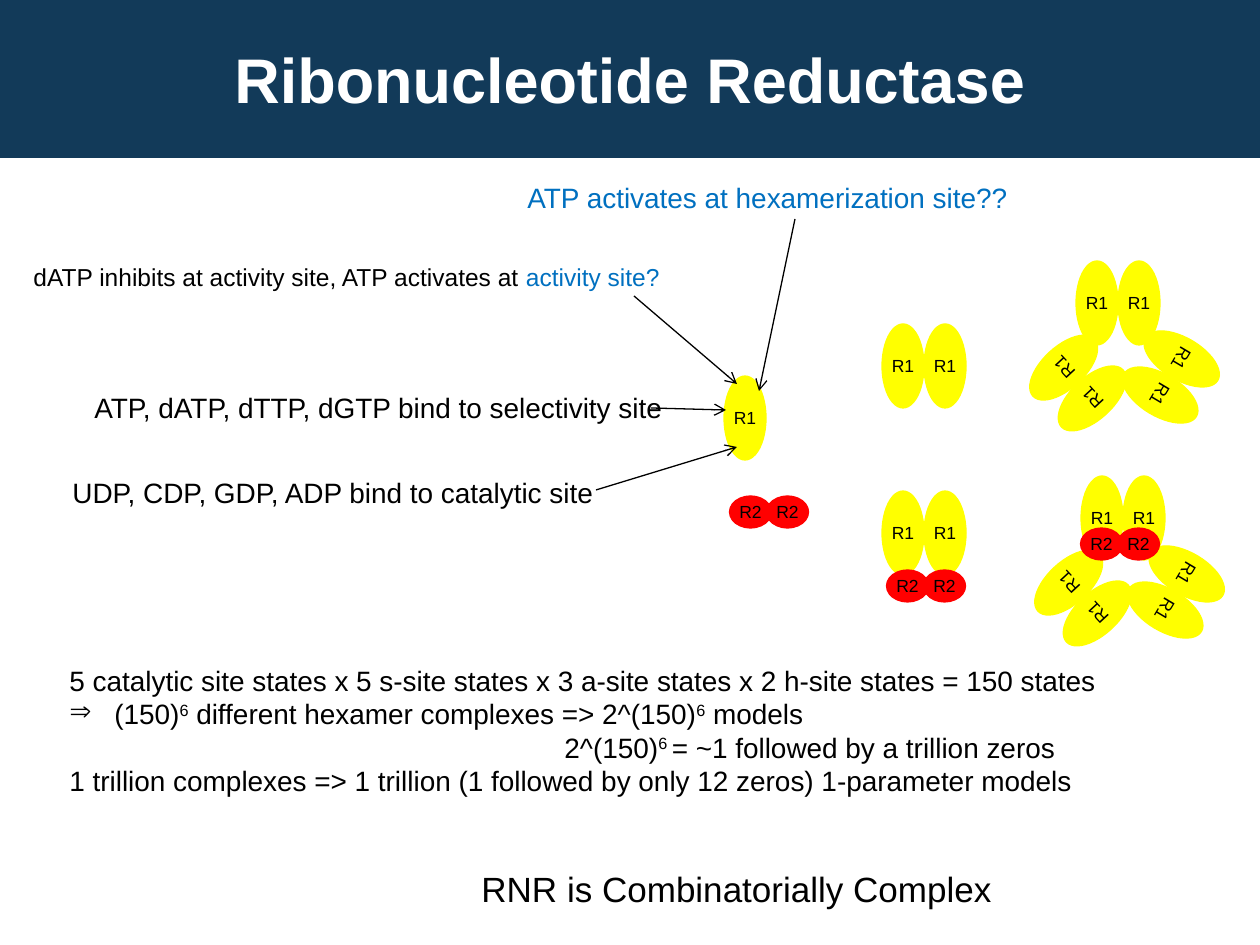
from math import cos, radians, sin

from lxml.etree import SubElement
from pptx import Presentation
from pptx.dml.color import RGBColor
from pptx.enum.shapes import MSO_CONNECTOR, MSO_SHAPE
from pptx.enum.text import MSO_ANCHOR, PP_ALIGN
from pptx.oxml.ns import qn
from pptx.util import Pt

PX = 914400 / 126
COLORS = {"navy": "123A59", "white": "FFFFFF", "black": "000000",
          "blue": "0070C0", "R1": "FFFF00", "R2": "FF0000"}

# Subunit: width, height, distance between the two centres of a dimer
SUBUNITS = {"R1": (42, 84, 42), "R2": (42, 32, 37)}

# Dimers: subunit, centre x, centre y
DIMERS = [("R2", 769, 512), ("R1", 924, 366), ("R1", 924, 533), ("R2", 926, 586)]
# Hexamer: offset of each R1 dimer from the hexamer centre, rotation
HEXAMER = [(0, 0, 0), (53, 74, 120.7), (-40, 80, 227.2)]
HEXAMER_CENTERS = [(1118, 303), (1123, 518)]
HEXAMER_R2 = ("R2", 1120, 544)

# Runs are (text, format); labels are (left, top, width, height, size, runs)
LABELS = [
    (60, 469, 598, 46, 16, [("UDP, CDP, GDP, ADP bind to catalytic site", {})]),
    (82, 384, 745, 46, 16, [("ATP, dATP, dTTP, dGTP bind to selectivity site", {})]),
    (21, 256, 664, 42, 14, [("dATP inhibits at activity site, ATP activates at ", {}),
                            ("activity site?", {"color": "blue"})]),
    (515, 174, 561, 46, 16, [("ATP activates at hexamerization site??", {"color": "blue"})]),
    (469, 861, 612, 56, 20, [("RNR is Combinatorially Complex", {})]),
]
ARROWS = [(596, 490, 737, 447), (651, 408, 726, 410),
          (634, 296, 737, 384), (795, 219, 759, 391)]

SUP = {"superscript": True}
# Paragraphs: runs, left margin, bullet
COUNTS = [
    ([("5 catalytic site states x 5 s-site states x 3 a-site states "
       "x 2 h-site states = 150 states", {})], 0, None),
    ([("(150)", {}), ("6", SUP), (" different hexamer complexes => 2^(150)", {}),
      ("6", SUP), (" models", {})], 45, "⇒"),
    ([("2^(150)", {}), ("6 ", SUP), ("= ~1 followed by a trillion zeros", {})], 495, None),
    ([("1 trillion complexes => 1 trillion (1 followed by only 12 zeros) "
       "1-parameter models", {})], 0, None),
]


def emu(*values):
    return [round(v * PX) for v in values]


def rgb(name):
    return RGBColor.from_string(COLORS[name])


def add_run(p, text, size=16, color="black", bold=False, superscript=False):
    r = p.add_run()
    r.text = text
    r.font.name = "Arial"
    r.font.size = Pt(size)
    r.font.bold = bold
    r.font.color.rgb = rgb(color)
    if superscript:
        r._r.get_or_add_rPr().set("baseline", "30000")


def add_textbox(s, left, top, width, height):
    tf = s.shapes.add_textbox(*emu(left, top, width, height)).text_frame
    tf.word_wrap = True
    return tf


def add_shape(s, kind, box, fill, text, **fmt):
    """Filled shape with centred text."""
    sp = s.shapes.add_shape(kind, *emu(*box))
    sp.shadow.inherit = False
    sp.fill.solid()
    sp.fill.fore_color.rgb = rgb(fill)
    sp.line.color.rgb = rgb(fill)
    sp.line.width = Pt(0.75)
    tf = sp.text_frame
    tf.margin_left = tf.margin_right = tf.margin_top = tf.margin_bottom = 0
    tf.vertical_anchor = MSO_ANCHOR.MIDDLE
    p = tf.paragraphs[0]
    p.alignment = PP_ALIGN.CENTER
    add_run(p, text, **fmt)
    return sp


def add_subunit(s, name, x, y, rotation=0):
    w, h, _ = SUBUNITS[name]
    sp = add_shape(s, MSO_SHAPE.OVAL, (x - w / 2, y - h / 2, w, h), name, name, size=10)
    sp.rotation = rotation


def add_dimer(s, name, x, y, rotation=0):
    half = SUBUNITS[name][2] / 2
    dx, dy = half * cos(radians(rotation)), half * sin(radians(rotation))
    for side in (-1, 1):
        add_subunit(s, name, x + side * dx, y + side * dy, rotation)


def add_arrow(s, *ends):
    line = s.shapes.add_connector(MSO_CONNECTOR.STRAIGHT, *emu(*ends))
    line.line.color.rgb = rgb("black")
    line.line.width = Pt(0.75)
    spPr = line._element.spPr
    SubElement(spPr.find(qn("a:ln")), qn("a:tailEnd"), type="arrow")
    SubElement(spPr, qn("a:effectLst"))


def set_indent(p, margin, bullet):
    pPr = p._p.get_or_add_pPr()
    pPr.set("marL", str(emu(margin)[0]))
    if bullet:
        pPr.set("indent", str(-emu(margin)[0]))
        SubElement(pPr, qn("a:buChar"), char=bullet)


def main():
    prs = Presentation()
    prs.slide_width, prs.slide_height = emu(1260, 945)
    s = prs.slides.add_slide(prs.slide_layouts[6])

    add_shape(s, MSO_SHAPE.RECTANGLE, (0, 0, 1260, 157), "navy",
              "Ribonucleotide Reductase", size=36, color="white", bold=True)

    add_subunit(s, "R1", 745, 418)
    for dimer in DIMERS:
        add_dimer(s, *dimer)
    for x, y in HEXAMER_CENTERS:
        for dx, dy, rotation in HEXAMER:
            add_dimer(s, "R1", x + dx, y + dy, rotation)
    add_dimer(s, *HEXAMER_R2)

    for *box, size, runs in LABELS:
        p = add_textbox(s, *box).paragraphs[0]
        for text, fmt in runs:
            add_run(p, text, size=size, **fmt)
    for ends in ARROWS:
        add_arrow(s, *ends)

    tf = add_textbox(s, 57, 657, 1067, 199)
    for i, (runs, margin, bullet) in enumerate(COUNTS):
        p = tf.add_paragraph() if i else tf.paragraphs[0]
        set_indent(p, margin, bullet)
        for text, fmt in runs:
            add_run(p, text, **fmt)

    prs.save("out.pptx")


if __name__ == "__main__":
    main()
